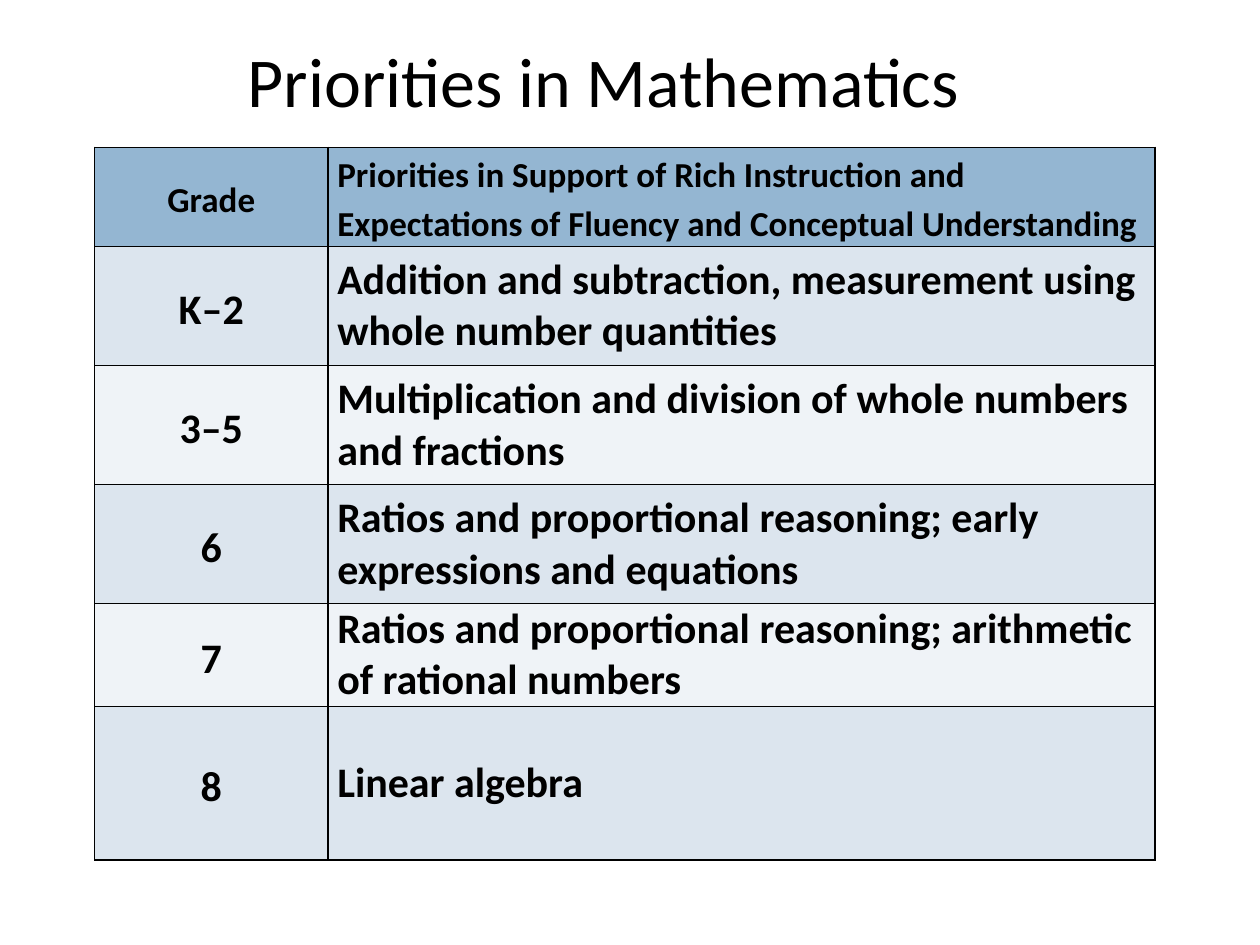
"""Build a slide with a table of mathematics priorities by grade."""
from dataclasses import dataclass

import pptx
import pptx.dml.color
import pptx.enum.text
import pptx.oxml
import pptx.oxml.ns
import pptx.util
from pptx.util import Cm

ALIGN = pptx.enum.text.PP_ALIGN
ANCHOR = pptx.enum.text.MSO_ANCHOR


@dataclass(frozen=True)
class Theme:
    font: str = "Calibri"
    ink: str = "000000"
    header: str = "94B6D2"
    bands: tuple = ("DCE5EE", "EFF3F7")
    title_size: int = 40
    header_size: int = 20
    body_size: int = 24
    border: int = 1


THEME = Theme()
COLUMNS = (4.7, 16.67)
ROWS = (
    ("Grade", "Priorities in Support of Rich Instruction and Expectations of "
              "Fluency and Conceptual Understanding", 2.0),
    ("K–2", "Addition and subtraction, measurement using whole number quantities", 2.4),
    ("3–5", "Multiplication and division of whole numbers and fractions", 2.4),
    ("6", "Ratios and proportional reasoning; early expressions and equations", 2.4),
    ("7", "Ratios and proportional reasoning; arithmetic of rational numbers", 2.07),
    ("8", "Linear algebra", 3.1),
)


def rgb(color):
    return pptx.dml.color.RGBColor.from_string(color)


def write(tf, text, size, align, bold=False, spacing=None):
    tf.word_wrap = True
    tf.text = text
    p = tf.paragraphs[0]
    p.alignment = align
    p.line_spacing = spacing
    p.font.name = THEME.font
    p.font.size = pptx.util.Pt(size)
    p.font.bold = bold
    p.font.color.rgb = rgb(THEME.ink)


def add_title(s, text):
    sp = s.shapes.add_textbox(Cm(1.47), Cm(0.64), Cm(21.39), Cm(1.96))
    write(sp.text_frame, text, THEME.title_size, ALIGN.CENTER)


def add_borders(cell):
    tc_pr = cell._tc.get_or_add_tcPr()
    width = pptx.util.Pt(THEME.border)
    for side in "LRTB":
        tc_pr.append(pptx.oxml.parse_xml(
            f'<a:ln{side} {pptx.oxml.ns.nsdecls("a")} w="{width}"><a:solidFill>'
            f'<a:srgbClr val="{THEME.ink}"/></a:solidFill></a:ln{side}>'))


def style_cell(cell, fill):
    cell.margin_left = cell.margin_right = Cm(0.19)
    cell.margin_top = cell.margin_bottom = 0
    cell.vertical_anchor = ANCHOR.MIDDLE
    add_borders(cell)
    cell.fill.solid()
    cell.fill.fore_color.rgb = rgb(fill)


def add_priorities(s):
    height = sum(row[-1] for row in ROWS)
    table = s.shapes.add_table(len(ROWS), len(COLUMNS), Cm(1.91), Cm(2.97),
                               Cm(sum(COLUMNS)), Cm(height)).table
    for column, width in zip(table.columns, COLUMNS):
        column.width = Cm(width)
    for i, (grade, priority, row_height) in enumerate(ROWS):
        table.rows[i].height = Cm(row_height)
        is_header = i == 0
        fill = THEME.header if is_header else THEME.bands[(i - 1) % 2]
        size = THEME.header_size if is_header else THEME.body_size
        for j, text in enumerate((grade, priority)):
            cell = table.cell(i, j)
            style_cell(cell, fill)
            align = ALIGN.LEFT if j else ALIGN.CENTER
            spacing = 1.15 if is_header or j == 0 else 1.0
            write(cell.text_frame, text, size, align, True, spacing)


def main():
    prs = pptx.Presentation()
    prs.slide_width, prs.slide_height = Cm(25.4), Cm(19.05)
    s = prs.slides.add_slide(prs.slide_layouts[6])
    add_priorities(s)
    add_title(s, "Priorities in Mathematics")
    prs.save("out.pptx")


if __name__ == "__main__":
    main()
